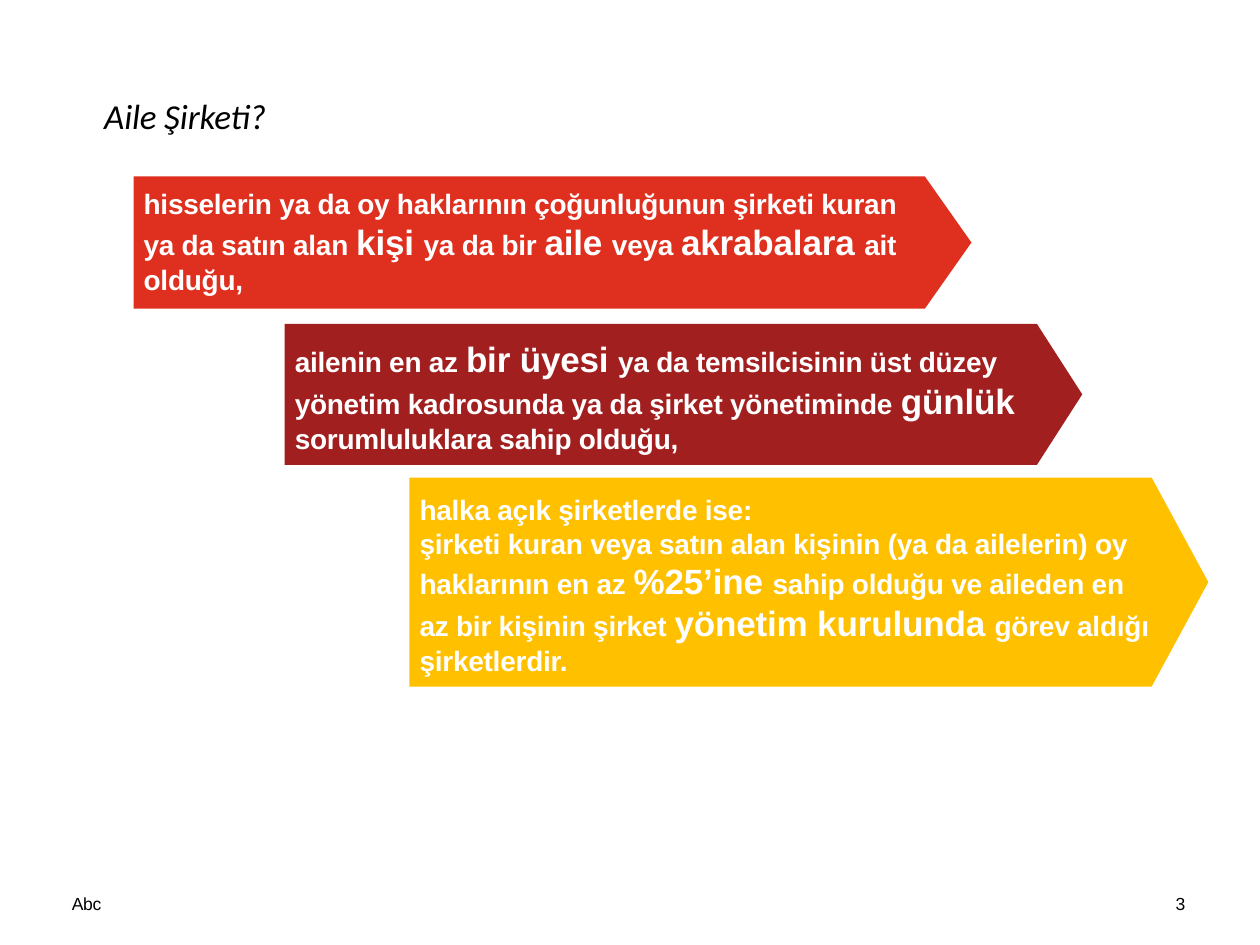
from pptx import Presentation
from pptx.dml.color import RGBColor
from pptx.enum.shapes import MSO_SHAPE
from pptx.enum.text import MSO_ANCHOR, PP_ALIGN
from pptx.util import Inches, Pt

ARROW = MSO_SHAPE.PENTAGON
TOP, MIDDLE = MSO_ANCHOR.TOP, MSO_ANCHOR.MIDDLE
LEFT, CENTER = PP_ALIGN.LEFT, PP_ALIGN.CENTER
RED = RGBColor(0xDF, 0x2F, 0x1E)
DARK = RGBColor(0xA2, 0x1F, 0x1F)
GOLD = RGBColor(0xFF, 0xC0, 0x00)
WHITE = RGBColor(0xFF, 0xFF, 0xFF)
BLACK = RGBColor(0, 0, 0)
COLS, ROWS = 100, 75


class Deck:
    body, head = "Arial", "Calibri"
    small, base, large, title = 10, 16, 20, 20

    def __init__(self):
        self.prs = Presentation()
        self.prs.slide_width = Inches(10)
        self.prs.slide_height = Inches(7.5)
        self.slide = self.prs.slides.add_slide(self.prs.slide_layouts[6])

    def place(self, col, row, wide, high):
        x = self.prs.slide_width / COLS
        y = self.prs.slide_height / ROWS
        return [round(n) for n in (col * x, row * y, wide * x, high * y)]

    def frame(self, shape, left, top, right, anchor):
        frame = shape.text_frame
        frame.word_wrap = True
        frame.vertical_anchor = anchor
        frame.margin_left, frame.margin_top = Inches(left), Inches(top)
        frame.margin_right, frame.margin_bottom = Inches(right), 0
        return frame

    def run(self, para, text, size, color, font, bold=False, slant=False):
        run = para.add_run()
        run.text = text
        run.font.size, run.font.name = Pt(size), font
        run.font.bold, run.font.italic = bold, slant
        run.font.color.rgb = color
        run.font._element.set("spc", "-10")

    def label(self, cell, text, size, font, align=LEFT, anchor=TOP, slant=False):
        box = self.slide.shapes.add_textbox(*self.place(*cell))
        para = self.frame(box, 0, 0.02, 0, anchor).paragraphs[0]
        para.alignment = align
        self.run(para, text, size, BLACK, font, slant=slant)

    def arrow(self, cell, tip, color, inset, paras):
        shape = self.slide.shapes.add_shape(ARROW, *self.place(*cell))
        shape.adjustments[0] = tip / cell[3]
        shape.shadow.inherit = False
        shape.fill.solid()
        shape.fill.fore_color.rgb = color
        shape.line.fill.background()
        frame = self.frame(shape, 0.08, inset, 0.18, TOP)
        for i, parts in enumerate(paras):
            para = frame.add_paragraph() if i else frame.paragraphs[0]
            para.alignment = LEFT
            for j, text in enumerate(parts):
                size = self.large if j % 2 else self.base
                self.run(para, text, size, WHITE, self.body, bold=True)


def main():
    deck = Deck()
    deck.label((5.7, 7.3, 18, 3.6), "Aile Şirketi?", deck.title, deck.head,
               CENTER, MIDDLE, True)
    deck.arrow((10.6, 14, 66.5, 10.5), 3.7, RED, 0.08, [
        ["hisselerin ya da oy haklarının çoğunluğunun şirketi kuran "
         "ya da satın alan ", "kişi ", "ya da bir ", "aile ", "veya ",
         "akrabalara ", "ait olduğu,"]])
    deck.arrow((22.6, 25.7, 63.3, 11.2), 3.6, DARK, 0.11, [
        ["ailenin en az ", "bir üyesi ", "ya da temsilcisinin üst düzey "
         "yönetim kadrosunda ya da şirket yönetiminde ", "günlük ",
         "sorumluluklara sahip olduğu,"]])
    deck.arrow((32.5, 37.9, 63.4, 16.6), 4.5, GOLD, 0.12, [
        ["halka açık şirketlerde ise:"],
        ["şirketi kuran veya satın alan kişinin (ya da ailelerin) oy "
         "haklarının en az ", "%25’ine ", "sahip olduğu ve aileden en "
         "az bir kişinin şirket ", "yönetim kurulunda ",
         "görev aldığı şirketlerdir."]])
    deck.label((5.7, 70.7, 4, 1.9), "Abc", deck.small, deck.body)
    deck.label((93.3, 70.7, 1.5, 1.9), "3", deck.small, deck.body)
    deck.prs.save("out.pptx")


if __name__ == "__main__":
    main()
